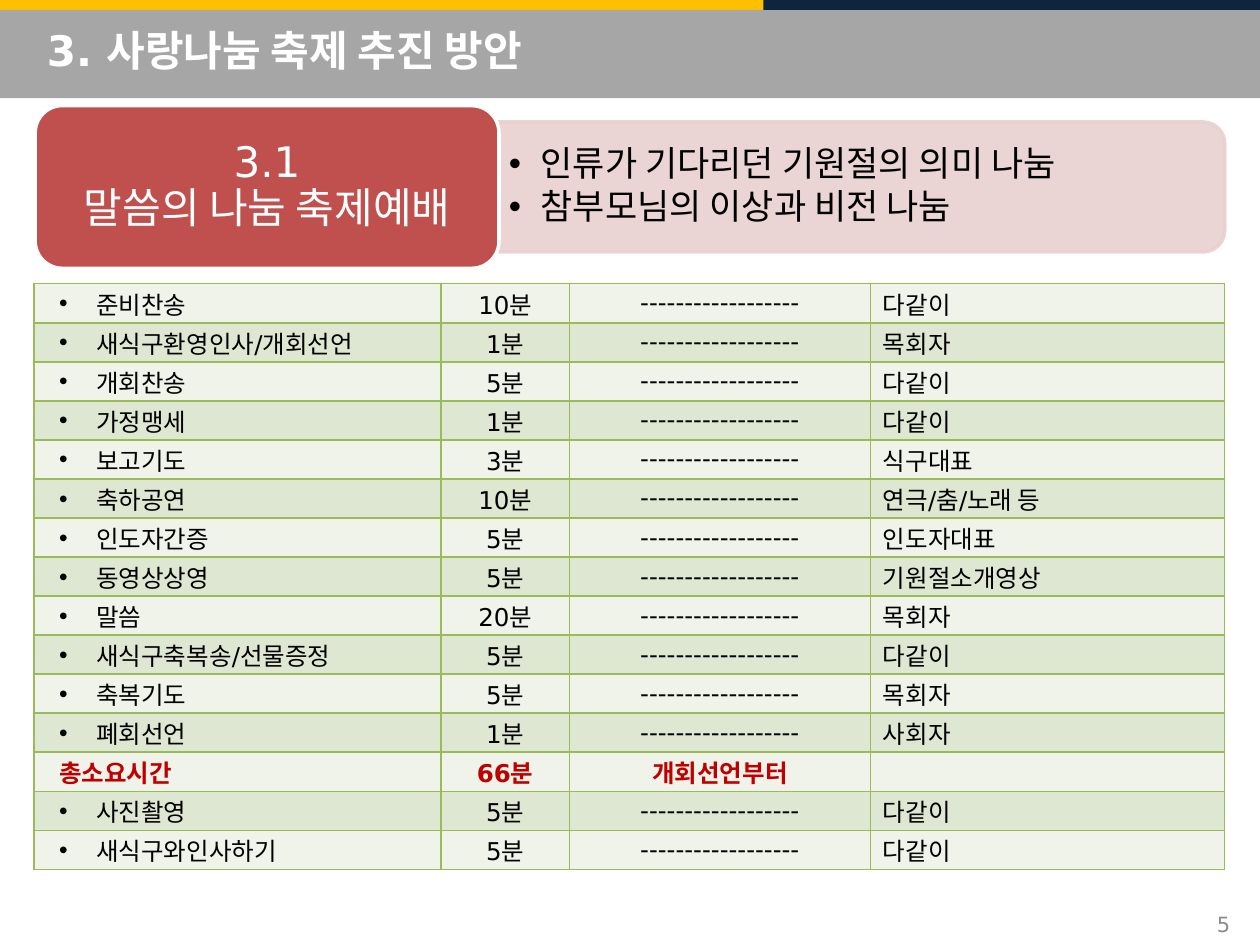
from lxml.etree import SubElement
from pptx import Presentation
from pptx.dml.color import RGBColor
from pptx.enum.shapes import MSO_SHAPE as Shape
from pptx.enum.text import MSO_ANCHOR as Anchor, PP_ALIGN as Align
from pptx.oxml.ns import qn
from pptx.util import Cm, Pt

FONT = "DejaVu Sans"
COLORS = {
    "gold": "FFC000", "gray": "A6A6A6", "navy": "0F243E", "white": "FFFFFF",
    "black": "000000", "number": "8C8C8C", "red": "C0504D", "pink": "E8D0D0",
    "total": "C00000", "border": "9BBB59", "odd": "EFF3EA", "even": "DEE7D1",
}
TITLE = "3. 사랑나눔 축제 추진 방안"
PAGE_NUMBER = "5"
BANDS = [
    ("gold", 0, 0, 25.4, 0.2),
    ("gray", 0, 0.2, 25.4, 1.78),
    ("navy", 15.39, 0, 10.01, 0.2),
]
BADGE = ["3.1", "말씀의 나눔 축제예배"]
GOALS = ["인류가 기다리던 기원절의 의미 나눔", "참부모님의 이상과 비전 나눔"]
DASHES = "-" * 18
TOTAL = "총소요시간"
PROGRAM = [
    ("준비찬송", "10분", DASHES, "다같이"),
    ("새식구환영인사/개회선언", "1분", DASHES, "목회자"),
    ("개회찬송", "5분", DASHES, "다같이"),
    ("가정맹세", "1분", DASHES, "다같이"),
    ("보고기도", "3분", DASHES, "식구대표"),
    ("축하공연", "10분", DASHES, "연극/춤/노래 등"),
    ("인도자간증", "5분", DASHES, "인도자대표"),
    ("동영상상영", "5분", DASHES, "기원절소개영상"),
    ("말씀", "20분", DASHES, "목회자"),
    ("새식구축복송/선물증정", "5분", DASHES, "다같이"),
    ("축복기도", "5분", DASHES, "목회자"),
    ("폐회선언", "1분", DASHES, "사회자"),
    (TOTAL, "66분", "개회선언부터", ""),
    ("사진촬영", "5분", DASHES, "다같이"),
    ("새식구와인사하기", "5분", DASHES, "다같이"),
]
COLUMN_WIDTHS = [8.2, 2.59, 6.07, 7.14]
COLUMN_ALIGNS = [Align.JUSTIFY, Align.CENTER, Align.CENTER, Align.JUSTIFY]
TABLE_HEIGHT = 11.81


def color(name):
    return RGBColor.from_string(COLORS[name])


def add_span(para, text, size, tone, bold=False):
    span = para.add_run()
    span.text = text
    span.font.name = FONT
    span.font.size = Pt(size)
    span.font.bold = bold
    span.font.color.rgb = color(tone)


def indent(para, left, hanging=0.0):
    props = para._p.get_or_add_pPr()
    props.set("marL", str(Cm(left)))
    props.set("indent", str(-Cm(hanging)))
    if hanging:
        SubElement(props, qn("a:buFont"), typeface="Arial")
        SubElement(props, qn("a:buChar"), char="•")


def add_shape(page, kind, tone, *place, line=None):
    shape = page.shapes.add_shape(kind, *map(Cm, place))
    shape.shadow.inherit = False
    shape.fill.solid()
    shape.fill.fore_color.rgb = color(tone)
    if line:
        shape.line.color.rgb = color(line)
        shape.line.width = Pt(2)
    else:
        shape.line.fill.background()
    return shape


def add_box(page, *place):
    frame = page.shapes.add_textbox(*map(Cm, place)).text_frame
    frame.word_wrap = True
    frame.vertical_anchor = Anchor.MIDDLE
    return frame


def add_borders(cell):
    props = cell._tc.get_or_add_tcPr()
    for side in ("a:lnL", "a:lnR", "a:lnT", "a:lnB"):
        line = SubElement(props, qn(side), w=str(Pt(1)))
        fill = SubElement(line, qn("a:solidFill"))
        SubElement(fill, qn("a:srgbClr"), val=COLORS["border"])


def add_header(page):
    for band in BANDS:
        add_shape(page, Shape.RECTANGLE, *band)
    title = page.shapes.title
    title.element.getparent().append(title.element)
    title.left, title.top, title.width, title.height = map(Cm, (0.69, 0.2, 23.55, 1.6))
    title.text_frame.vertical_anchor = Anchor.MIDDLE
    para = title.text_frame.paragraphs[0]
    para.alignment = Align.LEFT
    add_span(para, TITLE, 24, "white", True)


def add_program(page):
    table = page.shapes.add_table(
        len(PROGRAM), len(COLUMN_WIDTHS), Cm(0.69), Cm(5.72),
        Cm(sum(COLUMN_WIDTHS)), Cm(TABLE_HEIGHT)).table
    table.first_row = False
    for column, width in zip(table.columns, COLUMN_WIDTHS):
        column.width = Cm(width)
    for index, texts in enumerate(PROGRAM):
        table.rows[index].height = Cm(TABLE_HEIGHT / len(PROGRAM))
        is_total = texts[0] == TOTAL
        for col, text in enumerate(texts):
            cell = table.cell(index, col)
            add_borders(cell)
            cell.fill.solid()
            cell.fill.fore_color.rgb = color("even" if index % 2 else "odd")
            cell.margin_left = cell.margin_right = Cm(0.25)
            cell.margin_top = cell.margin_bottom = 0
            cell.vertical_anchor = Anchor.MIDDLE
            para = cell.text_frame.paragraphs[0]
            para.alignment = COLUMN_ALIGNS[col]
            if col == 0:
                indent(para, *((0.25,) if is_total else (1.0, 0.75)))
            if text:
                add_span(para, text, 14, "total" if is_total else "black", is_total)


def add_goals(page):
    panel = add_shape(page, Shape.ROUND_2_SAME_RECTANGLE, "pink",
                      16.05, -3.56, 2.62, 14.66, line="pink")
    panel.rotation = 90
    for tone in panel.element.spPr.iter(qn("a:srgbClr")):
        SubElement(tone, qn("a:alpha"), val="90000")
    frame = add_box(page, 10.06, 2.59, 14.53, 2.36)
    frame.margin_left = frame.margin_right = Cm(0.2)
    frame.margin_top = frame.margin_bottom = Cm(0.1)
    for index, goal in enumerate(GOALS):
        para = frame.add_paragraph() if index else frame.paragraphs[0]
        para.line_spacing = 0.9
        para.space_after = Pt(3)
        indent(para, 0.64, 0.64)
        add_span(para, goal, 20, "black")


def add_badge(page):
    badge = add_shape(page, Shape.ROUNDED_RECTANGLE, "red",
                      0.71, 2.13, 9.35, 3.28, line="white")
    badge.text_frame.vertical_anchor = Anchor.MIDDLE
    para = badge.text_frame.paragraphs[0]
    para.alignment = Align.CENTER
    para.line_spacing = 0.9
    for index, text in enumerate(BADGE):
        if index:
            para.add_line_break()
        add_span(para, text, 24, "white")


def main():
    """Build the festival programme slide."""
    deck = Presentation()
    deck.slide_width, deck.slide_height = Cm(25.4), Cm(19.05)
    page = deck.slides.add_slide(deck.slide_layouts[5])
    add_header(page)
    number = add_box(page, 19.13, 18.11, 5.92, 1.02).paragraphs[0]
    number.alignment = Align.RIGHT
    add_span(number, PAGE_NUMBER, 12, "number")
    add_program(page)
    add_goals(page)
    add_badge(page)
    deck.save("out.pptx")


if __name__ == "__main__":
    main()
